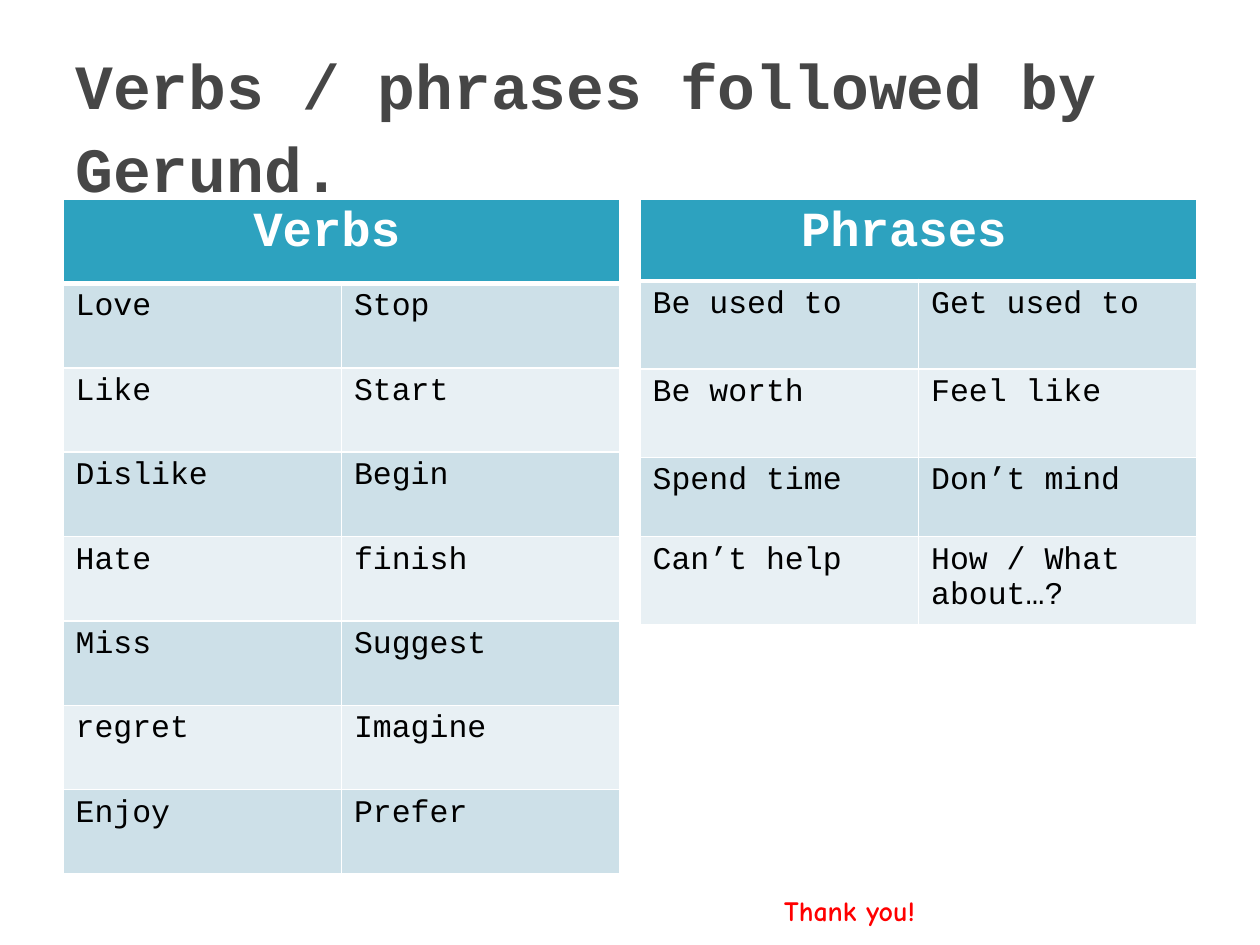
"""Build a grammar slide listing verbs and phrases followed by the gerund."""
from lxml.etree import SubElement
from pptx import Presentation
from pptx.dml.color import RGBColor as Color
from pptx.enum.text import MSO_ANCHOR as Anchor, PP_ALIGN as Align
from pptx.oxml.ns import qn
from pptx.util import Inches, Pt

THEME = {
    "title": {"name": "Courier New", "size": 36, "bold": True, "color": "464646"},
    "stop": {"name": "Courier New", "size": 36.9, "bold": True, "color": "464646"},
    "header": {"name": "Courier New", "size": 28, "bold": True, "color": "FFFFFF"},
    "body": {"name": "Courier New", "size": 18, "bold": False, "color": "000000"},
    "footer": {"name": "Comic Neue", "size": 16, "bold": True, "color": "FF0000"},
    "header_fill": "2DA2BF",
    "bands": ("CDE0E8", "E8F0F4"),
    "border": "FFFFFF",
}

TITLE = [("Verbs / phrases followed by Gerund", "title"), (".", "stop")]
FOOTER = [("Thank you!", "footer")]
TABLES = [
    {
        "left": 0.5,
        "heading": "Verbs ",
        "heights": [0.67] * 8,
        "rows": [
            ("Love", "Stop"),
            ("Like", "Start"),
            ("Dislike", "Begin"),
            ("Hate", "finish"),
            ("Miss", "Suggest"),
            ("regret", "Imagine"),
            ("Enjoy", "Prefer"),
        ],
    },
    {
        "left": 5.08,
        "heading": "Phrases ",
        "heights": [0.65, 0.7, 0.7, 0.63, 0.51],
        "rows": [
            ("Be used to", "Get used to"),
            ("Be worth", "Feel like"),
            ("Spend time", "Don’t mind"),
            ("Can’t help", "How / What about…?"),
        ],
    },
]
TABLE_TOP, COLUMN_WIDTH = 1.58, 2.21


def add_span(para, text, style):
    span = para.add_run()
    span.text = text
    values = dict(THEME[style])
    span.font.color.rgb = Color.from_string(values.pop("color"))
    values["size"] = Pt(values["size"])
    for name, value in values.items():
        setattr(span.font, name, value)


def add_text(page, bounds, spans, frame_format, para_format):
    box = page.shapes.add_textbox(*map(Inches, bounds))
    for name, value in {"word_wrap": True, **frame_format}.items():
        setattr(box.text_frame, name, value)
    para = box.text_frame.paragraphs[0]
    for name, value in para_format.items():
        setattr(para, name, value)
    for text, style in spans:
        add_span(para, text, style)


def style_cell(cell, fill, top, bottom):
    properties = cell._tc.get_or_add_tcPr()
    for side, width in {"L": 1, "R": 1, "T": top, "B": bottom}.items():
        line = SubElement(properties, qn(f"a:ln{side}"), w=str(Pt(width)))
        solid = SubElement(line, qn("a:solidFill"))
        SubElement(solid, qn("a:srgbClr"), val=THEME["border"])
    cell.fill.solid()
    cell.fill.fore_color.rgb = Color.from_string(fill)


def add_word_table(page, content):
    rows = [(content["heading"], ""), *content["rows"]]
    heights = content["heights"]
    bounds = (content["left"], TABLE_TOP, 2 * COLUMN_WIDTH, sum(heights))
    table = page.shapes.add_table(len(rows), 2, *map(Inches, bounds)).table
    for column in table.columns:
        column.width = Inches(COLUMN_WIDTH)
    table.cell(0, 0).merge(table.cell(0, 1))
    for index, (words, height) in enumerate(zip(rows, heights)):
        table.rows[index].height = Inches(height)
        is_header = index == 0
        fill = THEME["header_fill"] if is_header else THEME["bands"][(index - 1) % 2]
        for column, word in enumerate(words):
            cell = table.cell(index, column)
            style_cell(cell, fill, 3 if index == 1 else 1, 3 if is_header else 1)
            if word:
                para = cell.text_frame.paragraphs[0]
                para.alignment = Align.CENTER if is_header else Align.LEFT
                add_span(para, word, "header" if is_header else "body")


def main():
    deck = Presentation()
    deck.slide_width, deck.slide_height = Inches(10), Inches(7.5)
    page = deck.slides.add_slide(deck.slide_layouts[6])
    add_text(page, (0.5, 0.3, 9, 1.25), TITLE,
             {"vertical_anchor": Anchor.MIDDLE, "margin_top": Inches(0.15)},
             {"line_spacing": 1.08})
    for content in TABLES:
        add_word_table(page, content)
    add_text(page, (4.79, 7.01, 2.57, 0.4), FOOTER,
             {"vertical_anchor": Anchor.BOTTOM}, {"alignment": Align.RIGHT})
    deck.save("out.pptx")


if __name__ == "__main__":
    main()
